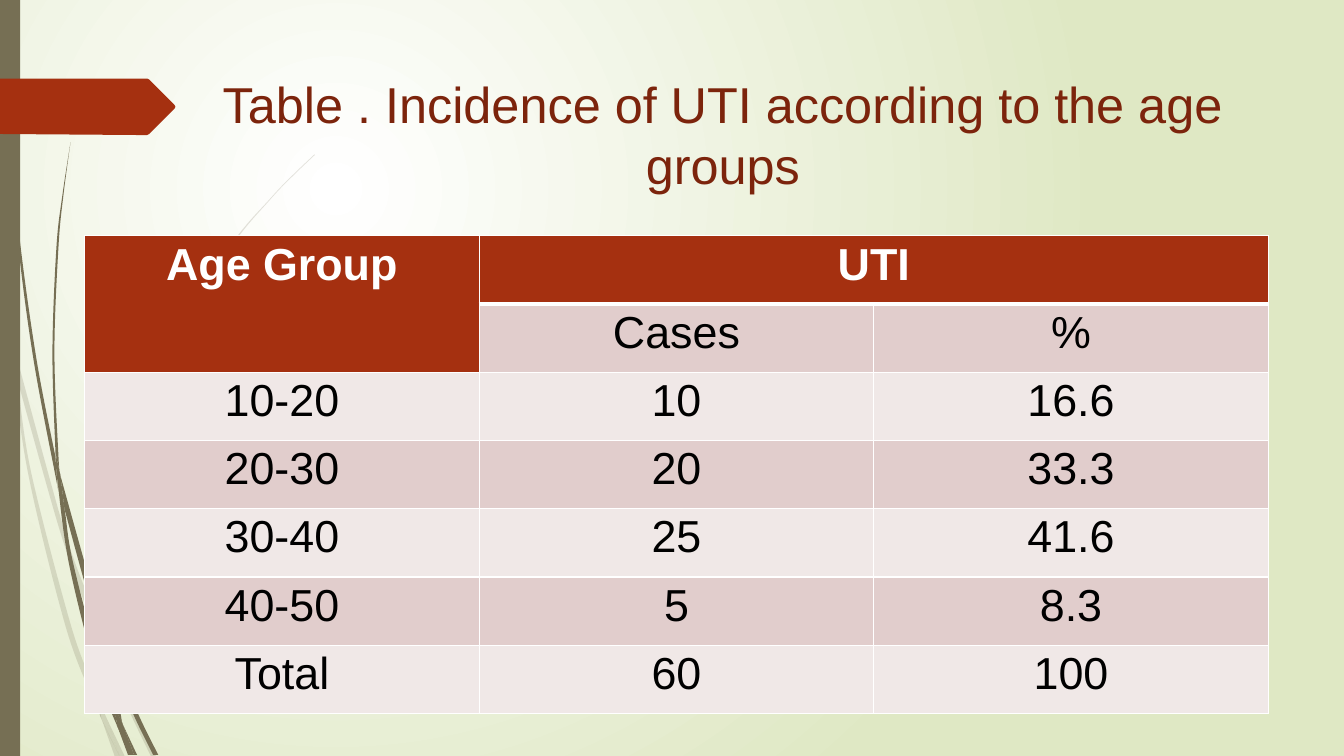
from lxml import etree
from pptx import Presentation
from pptx.dml.color import RGBColor
from pptx.enum.shapes import MSO_SHAPE
from pptx.enum.text import MSO_ANCHOR, PP_ALIGN
from pptx.oxml.ns import qn
from pptx.util import Inches, Pt

RECT = MSO_SHAPE.RECTANGLE
TOP = MSO_ANCHOR.TOP
CENTER = PP_ALIGN.CENTER

WHITE = RGBColor(0xFF, 0xFF, 0xFF)
BLACK = RGBColor(0x00, 0x00, 0x00)
GREEN = RGBColor(0xDF, 0xE8, 0xC4)
OLIVE = RGBColor(0x76, 0x6F, 0x54)
RUST = RGBColor(0xA5, 0x30, 0x10)
BROWN = RGBColor(0x7C, 0x24, 0x0C)
ROSE = RGBColor(0xE1, 0xCD, 0xCC)
PALE = RGBColor(0xF0, 0xE8, 0xE7)
FONT = "Arial"

# Content
TITLE = "Table . Incidence of UTI according to the age groups"
ROWS = [
    ("Age Group", "UTI", ""),
    ("", "Cases", "%"),
    ("10-20", "10", "16.6"),
    ("20-30", "20", "33.3"),
    ("30-40", "25", "41.6"),
    ("40-50", "5", "8.3"),
    ("Total", "60", "100"),
]

# Grass blades: each is one side down, then the other side back
FAINT = [
    ([(0.11, 3.5), (0.09, 3.22), (0, 2.82)], [(0, 2.99), (0.1, 3.44), (0.11, 3.5)]),
    ([(0.14, 3.45), (0.62, 5.2), (0.85, 5.86)],
     [(0.84, 5.99), (0.58, 5.22), (0.17, 3.76)]),
    ([(0.88, 5.96), (0.92, 6.07), (1.27, 6.92), (1.55, 7.51)],
     [(1.5, 7.51), (1.23, 6.94), (0.88, 6.1)]),
    ([(1.05, 7.11), (1.24, 7.51)], [(1.19, 7.51), (1.05, 7.11)]),
    ([(0.11, 3.5), (0.17, 3.76), (0.31, 4.69), (0.7, 6.19), (0.93, 6.83), (1.01, 7.14)],
     [(0.92, 6.93), (0.65, 6.21), (0.28, 4.7), (0.11, 3.5)]),
    ([(0.84, 5.99), (0.87, 6.46), (0.93, 6.83), (0.96, 6.92), (1.05, 7.11)],
     [(1.03, 7.06), (0.91, 6.46), (0.88, 6.1), (0.84, 5.99)]),
    ([(3.12, 1.53), (2.89, 1.75), (2.68, 1.97), (2.28, 2.44), (1.58, 3.48),
      (1.07, 4.61), (0.85, 5.84)],
     [(0.88, 5.96), (0.88, 5.84), (1.1, 4.62), (1.6, 3.49), (2.29, 2.45),
      (2.68, 1.98), (2.9, 1.75), (3.12, 1.54)]),
    ([(1.01, 7.14), (1.14, 7.51)], [(1.19, 7.51), (1.01, 7.14)]),
    ([(0.85, 5.86), (0.84, 5.99), (0.88, 6.1)], [(0.88, 5.96), (0.85, 5.86)]),
    ([(0.93, 6.83), (0.99, 7.07), (1.01, 7.14), (1.19, 7.51)],
     [(1.05, 7.11), (0.96, 6.92), (0.93, 6.83)]),
]
SOLID = [
    ([(0.03, 0), (0.04, 0.48), (0.07, 1.1), (0.17, 2.33), (0.33, 3.55), (0.56, 4.77),
      (0.57, 4.81)],
     [(0.55, 4.53), (0.36, 3.55), (0.19, 2.32), (0.08, 1.09), (0.05, 0.48), (0.04, 0)]),
    ([(0.6, 4.72), (0.93, 5.9), (1.06, 6.31)],
     [(1.06, 6.45), (0.88, 5.92), (0.64, 5.05)]),
    ([(1.1, 6.41), (1.13, 6.49), (1.36, 7.06), (1.57, 7.49)],
     [(1.52, 7.49), (1.32, 7.08), (1.11, 6.56)]),
    ([(0.57, 4.77), (0.64, 5.05), (0.72, 5.56), (0.98, 6.57), (1.1, 6.91), (1.17, 7.22)],
     [(1.11, 7.08), (0.93, 6.59), (0.68, 5.57), (0.57, 4.77)]),
    ([(0.7, 1.41), (0.62, 1.93), (0.56, 2.45), (0.52, 3.49), (0.55, 4.49)],
     [(0.6, 4.72), (0.58, 4.53), (0.54, 3.49), (0.58, 2.45), (0.63, 1.93), (0.7, 1.41)]),
    ([(1.22, 7.19), (1.36, 7.49)], [(1.33, 7.49), (1.22, 7.19)]),
    ([(0.55, 4.49), (0.57, 4.77), (0.64, 5.05)], [(0.6, 4.72), (0.55, 4.49)]),
    ([(2.6, 3.44), (2.45, 3.58), (2.31, 3.73), (2.04, 4.05), (1.56, 4.74),
      (1.22, 5.51), (1.06, 6.31)],
     [(1.1, 6.41), (1.11, 6.33), (1.25, 5.52), (1.58, 4.76), (2.05, 4.06),
      (2.31, 3.74), (2.45, 3.59), (2.61, 3.44)]),
    ([(1.17, 7.22), (1.27, 7.49)], [(1.31, 7.49), (1.17, 7.22)]),
    ([(1.06, 6.45), (1.1, 6.91), (1.16, 7.06), (1.22, 7.19)],
     [(1.21, 7.16), (1.11, 6.56), (1.06, 6.45)]),
    ([(1.06, 6.31), (1.06, 6.45), (1.11, 6.56)], [(1.1, 6.41), (1.06, 6.31)]),
    ([(1.1, 6.91), (1.16, 7.17), (1.17, 7.22), (1.3, 7.49)],
     [(1.33, 7.49), (1.22, 7.19), (1.16, 7.06), (1.1, 6.91)]),
]
TAG = [(0, 0.78), (1.46, 0.78), (1.48, 0.79), (1.73, 1.04), (1.74, 1.06),
       (1.73, 1.08), (1.48, 1.33), (1.46, 1.34), (1.36, 1.34), (0, 1.33)]


def bend(pts):
    """Two handles and an end point for each stretch of a smooth side."""
    ends = [pts[0]] + pts + [pts[-1]]
    out = []
    for a, b, c, d in zip(ends, ends[1:], ends[2:], ends[3:]):
        out.append(tuple(q + (r - p) / 6 for p, q, r in zip(a, b, c)))
        out.append(tuple(r - (s - q) / 6 for q, r, s in zip(b, c, d)))
        out.append(c)
    return out


def paint(shape, color):
    shape.shadow.inherit = False
    shape.fill.solid()
    shape.fill.fore_color.rgb = color
    shape.line.fill.background()


def draw(shapes, pts, color):
    ends = [(Inches(x), Inches(y)) for x, y in pts]
    pen = shapes.build_freeform(*ends[0])
    pen.add_line_segments(ends[1:], close=True)
    shape = pen.convert_to_shape()
    paint(shape, color)
    return shape


def blade(shapes, down, up, alpha):
    first = bend(down)
    shape = draw(shapes, down[:1] + first + up[:1] + bend(up), OLIVE)
    lines = list(shape._element.iter(qn("a:lnTo")))
    join = len(first)
    sides = lines[:join], lines[join + 1:]
    for side in sides:
        for trio in zip(side[::3], side[1::3], side[2::3]):
            curve = etree.Element(qn("a:cubicBezTo"))
            trio[0].addprevious(curve)
            for line in trio:
                curve.append(line[0])
                line.getparent().remove(line)
    if alpha < 100:
        tone = shape.fill._xPr.find(".//" + qn("a:srgbClr"))
        etree.SubElement(tone, qn("a:alpha"), val=str(alpha * 1000))


def write(frame, text, size, color, bold=False):
    frame.text = text
    para = frame.paragraphs[0]
    para.alignment = CENTER
    for run in para.runs:
        run.font.name, run.font.size = FONT, Pt(size)
        run.font.color.rgb, run.font.bold = color, bold
    return para


def edge(cell, under):
    props = cell._tc.get_or_add_tcPr()
    for spot, (side, width) in enumerate([("L", 1), ("R", 1), ("B", under)]):
        line = etree.Element(qn("a:ln" + side), w=str(Pt(width)))
        fill = etree.SubElement(line, qn("a:solidFill"))
        etree.SubElement(fill, qn("a:srgbClr"), val=str(WHITE))
        props.insert(spot, line)


deck = Presentation()
deck.slide_width, deck.slide_height = Inches(13.33), Inches(7.5)
slide = deck.slides.add_slide(deck.slide_layouts[6])
shapes = slide.shapes

# Background glow
back = slide.background.fill
back.gradient()
for stop, color, place in zip(back.gradient_stops, (WHITE, GREEN), (0, 1)):
    stop.color.rgb, stop.position = color, place
grad = slide.background._cSld.find(".//" + qn("a:gradFill"))
grad.remove(grad.find(qn("a:lin")))
glow = etree.Element(qn("a:path"), path="circle")
etree.SubElement(glow, qn("a:fillToRect"), l="50000", t="50000", r="100000", b="100000")
grad.find(qn("a:gsLst")).addnext(glow)

# Grass, side bar and tag
for blades, alpha in ((FAINT, 20), (SOLID, 100)):
    for down, up in blades:
        blade(shapes, down, up, alpha)
paint(shapes.add_shape(RECT, 0, 0, Inches(0.2), Inches(7.5)), OLIVE)
draw(shapes, TAG, RUST)

# Title
title = shapes.add_textbox(Inches(1.75), Inches(0.68), Inches(10.84), Inches(1.4))
title.text_frame.word_wrap = True
title.text_frame.vertical_anchor = TOP
write(title.text_frame, TITLE, 36, BROWN)

# Table
table = shapes.add_table(len(ROWS), 3, Inches(0.84), Inches(2.34),
                         Inches(11.74), Inches(4.74)).table
for r, row in enumerate(ROWS):
    for c, text in enumerate(row):
        cell = table.cell(r, c)
        last = 1 if c == 0 else 0
        head = r <= last
        cell.margin_left = cell.margin_right = Inches(0.07)
        cell.margin_top = cell.margin_bottom = 0
        cell.vertical_anchor = TOP
        para = write(cell.text_frame, text, 32, WHITE if head else BLACK, head)
        para.line_spacing = 1.07
        cell.fill.solid()
        cell.fill.fore_color.rgb = RUST if head else ROSE if r % 2 else PALE
        edge(cell, 3 if r == last else 1)
table.cell(0, 0).merge(table.cell(1, 0))
table.cell(0, 1).merge(table.cell(0, 2))

deck.save("out.pptx")
